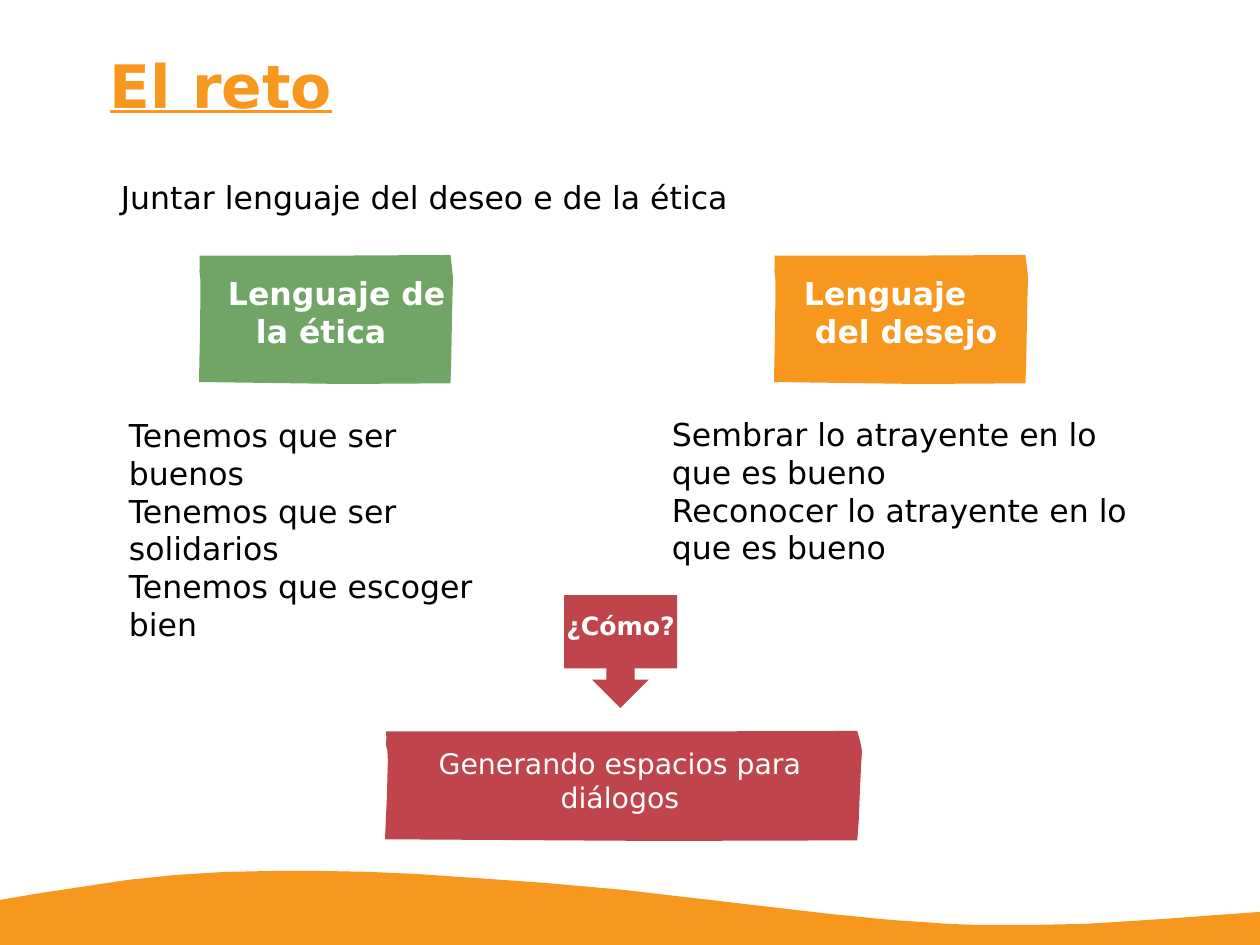
from pptx import Presentation
from pptx import util as u
from pptx.dml.color import RGBColor
from pptx.enum import shapes, text

PX = 8064
THEME = {
    "font": "DejaVu Sans",
    "orange": RGBColor.from_string("F8971D"),
    "green": RGBColor.from_string("70A566"),
    "red": RGBColor.from_string("BF444C"),
    "black": RGBColor.from_string("000000"),
    "white": RGBColor.from_string("FFFFFF"),
    "title": 38,
    "body": 20,
    "result": 18,
    "question": 16,
}


def write(frame, wording, size="body", color="black", bold=False, underline=False,
          align=text.PP_ALIGN.LEFT, spacing=None, margin=0, indent=0):
    frame.word_wrap = True
    frame.auto_size = text.MSO_AUTO_SIZE.NONE
    frame.vertical_anchor = text.MSO_ANCHOR.TOP
    frame.margin_left = frame.margin_right = frame.margin_top = frame.margin_bottom = 0
    frame.text = wording
    for paragraph in frame.paragraphs:
        paragraph.alignment = align
        paragraph.line_spacing = spacing
        properties = paragraph._p.get_or_add_pPr()
        properties.set("marL", str(margin * PX))
        properties.set("indent", str(indent * PX))
        font = paragraph.runs[0].font
        font.name = THEME["font"]
        font.size = u.Pt(THEME[size])
        font.color.rgb = THEME[color]
        font.bold = bold
        font.underline = underline


def paint(shape, color):
    shape.shadow.inherit = False
    shape.fill.solid()
    shape.fill.fore_color.rgb = THEME[color]
    shape.line.fill.background()


deck = Presentation()
deck.slide_width = 1260 * PX
deck.slide_height = 945 * PX
slide = deck.slides.add_slide(deck.slide_layouts[6])

wave_points = [
    (0, 900), (35, 894), (81, 887), (128, 880), (176, 875), (225, 872), (273, 871),
    (322, 871), (370, 872), (416, 874), (460, 877), (503, 880), (545, 883), (624, 890),
    (830, 914), (891, 920), (921, 922), (949, 924), (977, 925), (1005, 925), (1032, 925),
    (1084, 924), (1133, 921), (1177, 918), (1218, 915), (1260, 912), (1260, 945), (0, 945),
]
wave = slide.shapes.build_freeform(*wave_points[0], scale=PX)
wave.add_line_segments(wave_points[1:])
paint(wave.convert_to_shape(), "orange")

rough_edge = [
    (2, 5), (3, 60), (2, 130), (5, 175), (6, 270), (5, 440), (4, 600), (0, 985),
    (570, 1000), (990, 995), (993, 830), (996, 500), (998, 330), (1000, 180),
    (997, 110), (990, 0), (556, 5),
]
for left, top, width, height, color in [
    (199, 255, 254, 129, "green"),
    (385, 731, 477, 110, "red"),
    (774, 255, 254, 129, "orange"),
]:
    panel = slide.shapes.build_freeform(
        *rough_edge[0], scale=(width * PX / 1000, height * PX / 1000))
    panel.add_line_segments(rough_edge[1:])
    paint(panel.convert_to_shape(left * PX, top * PX), color)

for left, top, width, height, wording, style in [
    (110, 49, 1041, 128, "El reto",
     dict(size="title", color="orange", bold=True, underline=True, spacing=u.Pt(45.5))),
    (121, 161, 633, 94, "Juntar lenguaje del deseo e de la ética", dict(spacing=1.46)),
    (129, 416, 376, 236,
     "Tenemos que ser buenos\nTenemos que ser solidarios\nTenemos que escoger bien", {}),
    (672, 415, 491, 180,
     "Sembrar lo atrayente en lo que es bueno\nReconocer lo atrayente en lo que es bueno", {}),
    (227, 274, 226, 110, "Lenguaje de la ética",
     dict(color="white", bold=True, margin=29, indent=-28)),
    (802, 274, 226, 93, "Lenguaje del desejo",
     dict(color="white", bold=True, margin=13, indent=-11)),
    (393, 746, 454, 76, "Generando espacios para diálogos",
     dict(size="result", color="white", align=text.PP_ALIGN.CENTER)),
]:
    box = slide.shapes.add_textbox(left * PX, top * PX, width * PX, height * PX)
    write(box.text_frame, wording, **style)

question = slide.shapes.add_shape(
    shapes.MSO_SHAPE.DOWN_ARROW_CALLOUT, 564 * PX, 595 * PX, 113 * PX, 113 * PX)
paint(question, "red")
write(question.text_frame, "¿Cómo?", size="question", color="white", bold=True,
      align=text.PP_ALIGN.CENTER, spacing=1.5)

deck.save("out.pptx")
